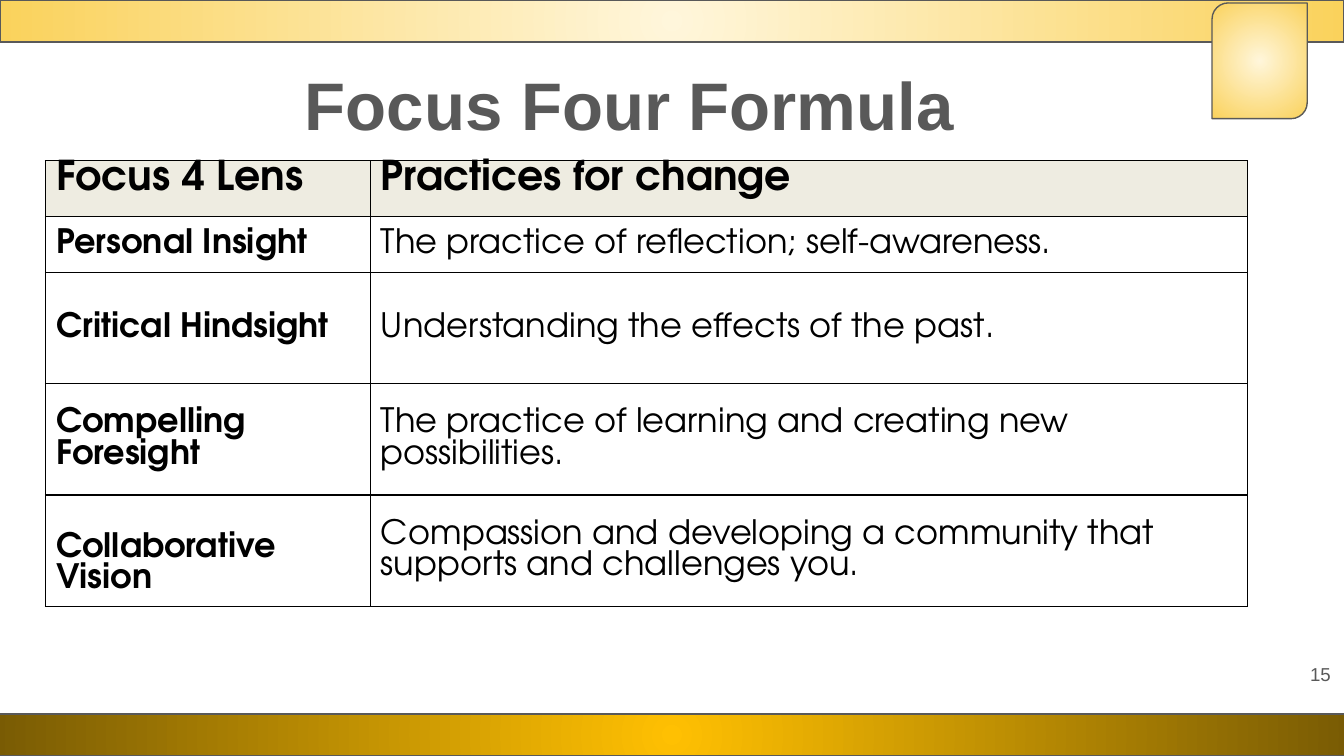
from lxml import etree
from pptx import Presentation
from pptx.dml.color import RGBColor
from pptx.enum.shapes import MSO_SHAPE as Shape
from pptx.enum.text import MSO_ANCHOR as Anchor, PP_ALIGN as Align
from pptx.oxml import parse_xml
from pptx.oxml.ns import nsdecls, qn
from pptx.util import Pt

COLORS = {"pale": "FFF6DB", "sand": "FAD25C", "gold": "FFC002", "bronze": "795B04",
          "gray": "595959", "black": "000000", "header": "EEECE1"}
HEADING_FONT, TABLE_FONT = "Arial", "TeX Gyre Adventor"
WIDTH, HEIGHT = 720, 405
ROWS = [
    ("Focus 4 Lens", "Practices for change"),
    ("Personal Insight", "The practice of reflection; self-awareness."),
    ("Critical Hindsight", "Understanding the effects of the past."),
    ("Compelling Foresight", "The practice of learning and creating new possibilities."),
    ("Collaborative Vision",
     "Compassion and developing a community that supports and challenges you."),
]
COLUMN_SHARES = (0.27, 0.73)
ROW_UNITS = (1, 1, 2, 2, 2)
LAST_LENS_DROP = 14


def color(name):
    return RGBColor.from_string(COLORS[name])


def write_text(frame, text, size=18, font=HEADING_FONT, ink="gray", bold=False, align=Align.LEFT):
    frame.word_wrap = True
    paragraph = frame.paragraphs[0]
    paragraph.alignment = align
    run = paragraph.add_run()
    run.text = text
    run.font.size = Pt(size)
    run.font.name = font
    run.font.bold = bold
    run.font.color.rgb = color(ink)


def add_text_box(slide, box, text, top_inset=3.6, **text_format):
    frame = slide.shapes.add_textbox(*map(Pt, box)).text_frame
    frame.margin_top = Pt(top_inset)
    write_text(frame, text, **text_format)


def add_glow_shape(slide, kind, box, center, edge):
    """Outlined shape with a radial gradient from center to edge."""
    shape = slide.shapes.add_shape(kind, *map(Pt, box))
    shape.shadow.inherit = False
    shape.line.color.rgb = color("gray")
    shape.line.width = Pt(0.75)
    stops = "".join(f'<a:gs pos="{position}"><a:srgbClr val="{COLORS[name]}"/></a:gs>'
                    for position, name in ((0, center), (100000, edge)))
    gradient = parse_xml(
        f'<a:gradFill {nsdecls("a")} rotWithShape="1"><a:gsLst>{stops}</a:gsLst>'
        '<a:path path="circle"><a:fillToRect l="50000" t="50000" r="50000" b="50000"/>'
        '</a:path></a:gradFill>')
    shape.element.spPr.find(qn("a:prstGeom")).addnext(gradient)
    return shape


def add_frame(slide, box):
    """Top and bottom bands with the corner tab."""
    left, top, width, height = box
    band = 22.5
    add_glow_shape(slide, Shape.RECTANGLE, (left, top, width, band), "pale", "sand")
    add_glow_shape(slide, Shape.RECTANGLE, (left - 2.5, top + height - band, width + 5, band),
                   "gold", "bronze")
    tab = add_glow_shape(slide, Shape.ROUND_2_DIAG_RECTANGLE,
                         (left + width - 70.7, top + 1.6, 51, 62), "pale", "sand")
    tab.adjustments[0] = 0.17
    tab.adjustments[1] = 0


def add_borders(cell):
    properties = cell._tc.get_or_add_tcPr()
    for side in "LRTB":
        line = etree.SubElement(properties, qn(f"a:ln{side}"), w=str(Pt(0.75)))
        fill = etree.SubElement(line, qn("a:solidFill"))
        etree.SubElement(fill, qn("a:srgbClr"), val=COLORS["black"])


def add_lens_table(slide, box):
    """Lens names on the left, practices on the right."""
    width, height = box[2:]
    table = slide.shapes.add_table(len(ROWS), len(COLUMN_SHARES), *map(Pt, box)).table
    table.first_row = table.horz_banding = False
    for column, share in zip(table.columns, COLUMN_SHARES):
        column.width = Pt(width * share)
    for row, units in zip(table.rows, ROW_UNITS):
        row.height = Pt(height * units / sum(ROW_UNITS))
    for row_index, texts in enumerate(ROWS):
        is_header = row_index == 0
        for column_index, text in enumerate(texts):
            cell = table.cell(row_index, column_index)
            add_borders(cell)
            cell.margin_left = cell.margin_right = Pt(5.75)
            cell.margin_top = cell.margin_bottom = 0
            cell.vertical_anchor = Anchor.TOP if is_header else Anchor.MIDDLE
            if is_header:
                cell.fill.solid()
                cell.fill.fore_color.rgb = color("header")
            else:
                cell.fill.background()
            write_text(cell.text_frame, text, size=22 if is_header else 18, font=TABLE_FONT,
                       ink="black", bold=is_header or column_index == 0)
    table.cell(len(ROWS) - 1, 0).margin_top = Pt(LAST_LENS_DROP)


def main():
    presentation = Presentation()
    presentation.slide_width, presentation.slide_height = Pt(WIDTH), Pt(HEIGHT)
    slide = presentation.slides.add_slide(presentation.slide_layouts[6])
    add_frame(slide, (0, 0, WIDTH, HEIGHT))
    # Slide number and title
    add_text_box(slide, (676.8, 351.5, 43.2, 31), "15", size=10, align=Align.RIGHT)
    add_text_box(slide, (126, 26.5, 422.5, 41), "Focus Four Formula", top_inset=7.2,
                 size=36, bold=True, align=Align.CENTER)
    add_lens_table(slide, (24.4, 86.1, 644, 238.8))
    presentation.save("out.pptx")


if __name__ == "__main__":
    main()
